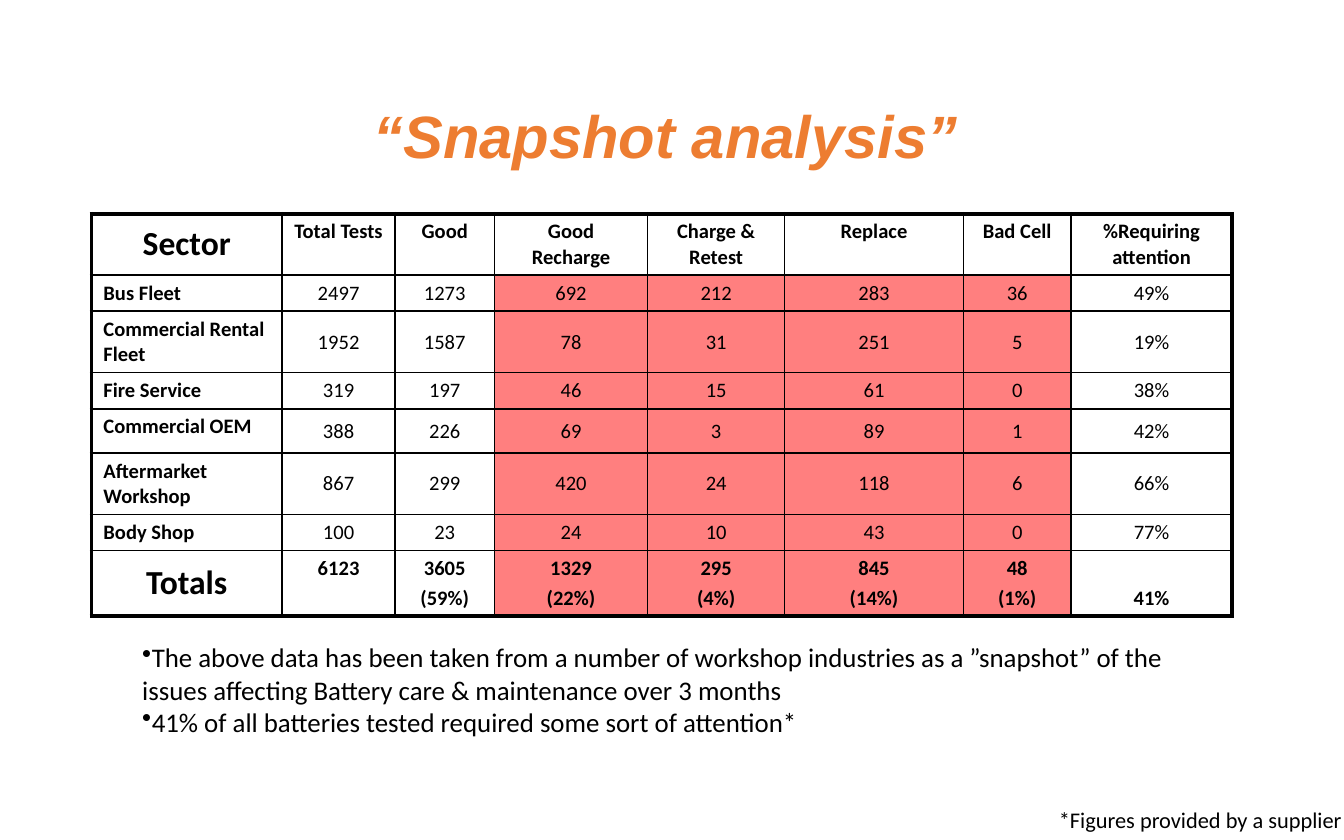
from lxml import etree
from pptx import Presentation
from pptx.dml.color import RGBColor
from pptx.enum.text import MSO_ANCHOR, PP_ALIGN
from pptx.oxml.ns import qn
from pptx.util import Inches, Pt

TOP, MIDDLE, BOTTOM = MSO_ANCHOR.TOP, MSO_ANCHOR.MIDDLE, MSO_ANCHOR.BOTTOM
LEFT, CENTER = PP_ALIGN.LEFT, PP_ALIGN.CENTER
BLACK, ORANGE, RED = "000000", "ED7D31", "FF0000"
THIN, THICK = 1, 2.25

COL_WIDTHS = [1.42, 0.84, 0.74, 1.14, 1.02, 1.33, 0.8, 1.2]
ROW_HEIGHTS = [0.43, 0.26, 0.43, 0.26, 0.33, 0.43, 0.26, 0.47]
ROWS = [
    ["Sector", "Total Tests", "Good", "Good Recharge", "Charge & Retest",
     "Replace", "Bad Cell", "%Requiring attention"],
    ["Bus Fleet", "2497", "1273", "692", "212", "283", "36", "49%"],
    ["Commercial Rental Fleet", "1952", "1587", "78", "31", "251", "5", "19%"],
    ["Fire Service", "319", "197", "46", "15", "61", "0", "38%"],
    ["Commercial OEM", "388", "226", "69", "3", "89", "1", "42%"],
    ["Aftermarket Workshop", "867", "299", "420", "24", "118", "6", "66%"],
    ["Body Shop", "100", "23", "24", "10", "43", "0", "77%"],
    ["Totals", "6123", "3605\n(59%)", "1329\n(22%)", "295\n(4%)",
     "845\n(14%)", "48\n(1%)", "41%"],
]
LAST_ROW, LAST_COL = len(ROWS) - 1, len(COL_WIDTHS) - 1
ATTENTION_COLS = range(3, 7)


def rgb(value):
    return RGBColor.from_string(value)


def write(tf, lines, color=BLACK, align=LEFT, space=0, bullet=None, **font):
    """Put one paragraph per line into tf, with space points between them."""
    for i, line in enumerate(lines):
        p = tf.paragraphs[0] if i == 0 else tf.add_paragraph()
        p.alignment = align
        if i and space:
            p.space_before = Pt(space)
        if bullet:
            etree.SubElement(p._p.get_or_add_pPr(), qn("a:buChar"), char=bullet)
        r = p.add_run()
        r.text = line
        r.font.color.rgb = rgb(color)
        for name, value in font.items():
            setattr(r.font, name, value)


prs = Presentation()
prs.slide_width, prs.slide_height = Inches(10), Inches(6.25)
s = prs.slides.add_slide(prs.slide_layouts[6])

# Table
table = s.shapes.add_table(len(ROWS), len(COL_WIDTHS), Inches(0.68), Inches(1.59),
                           Inches(sum(COL_WIDTHS)), Inches(sum(ROW_HEIGHTS))).table
for column, width in zip(table.columns, COL_WIDTHS):
    column.width = Inches(width)
for row, height in zip(table.rows, ROW_HEIGHTS):
    row.height = Inches(height)

for i, values in enumerate(ROWS):
    for j, value in enumerate(values):
        cell = table.cell(i, j)
        cell.margin_left = cell.margin_right = Inches(0.09)
        cell.margin_top = cell.margin_bottom = Inches(0.04)
        outer_row = i in (0, LAST_ROW)
        corner = outer_row and j == 0
        if (i, j) == (LAST_ROW, LAST_COL):
            cell.vertical_anchor = BOTTOM
        else:
            cell.vertical_anchor = MIDDLE if corner or (j and not outer_row) else TOP
        centered = corner or (j > 0 and (i, j) != (0, 1))
        write(cell.text_frame, value.split("\n"), align=CENTER if centered else LEFT,
              space=2.2, name="Calibri", size=Pt(18 if corner else 11),
              bold=outer_row or j == 0)

        tcPr = cell._tc.get_or_add_tcPr()
        if i and j in ATTENTION_COLS:
            cell.fill.solid()
            cell.fill.fore_color.rgb = rgb(RED)
            etree.SubElement(tcPr.find(".//" + qn("a:srgbClr")), qn("a:alpha"), val="50000")
        else:
            cell.fill.background()
        edges = {"lnL": j == 0, "lnR": j == LAST_COL, "lnT": i == 0, "lnB": i == LAST_ROW}
        for k, (tag, outer) in enumerate(edges.items()):
            ln = etree.Element(qn("a:" + tag), w=str(Pt(THICK if outer else THIN)))
            solid = etree.SubElement(ln, qn("a:solidFill"))
            etree.SubElement(solid, qn("a:srgbClr"), val=BLACK)
            tcPr.insert(k, ln)

# Title, findings and credit
texts = [
    ((2.68, 0.53, 7.02, 0.94), MIDDLE, ["“Snapshot analysis”"],
     {"color": ORANGE, "name": "Arial", "size": Pt(32), "bold": True, "italic": True}),
    ((0.96, 4.72, 8.08, 0.83), TOP,
     ["The above data has been taken from a number of workshop industries as a "
      "”snapshot” of the issues affecting Battery care & maintenance over 3 months",
      "41% of all batteries tested required some sort of attention*"],
     {"bullet": "•", "name": "Calibri", "size": Pt(14.4)}),
    ((7.78, 5.95, 3.83, 0.3), TOP, ["*Figures provided by a supplier"],
     {"name": "Calibri", "size": Pt(12)}),
]
for box, anchor, lines, style in texts:
    tf = s.shapes.add_textbox(*map(Inches, box)).text_frame
    tf.word_wrap = True
    tf.vertical_anchor = anchor
    write(tf, lines, **style)

prs.save("out.pptx")
